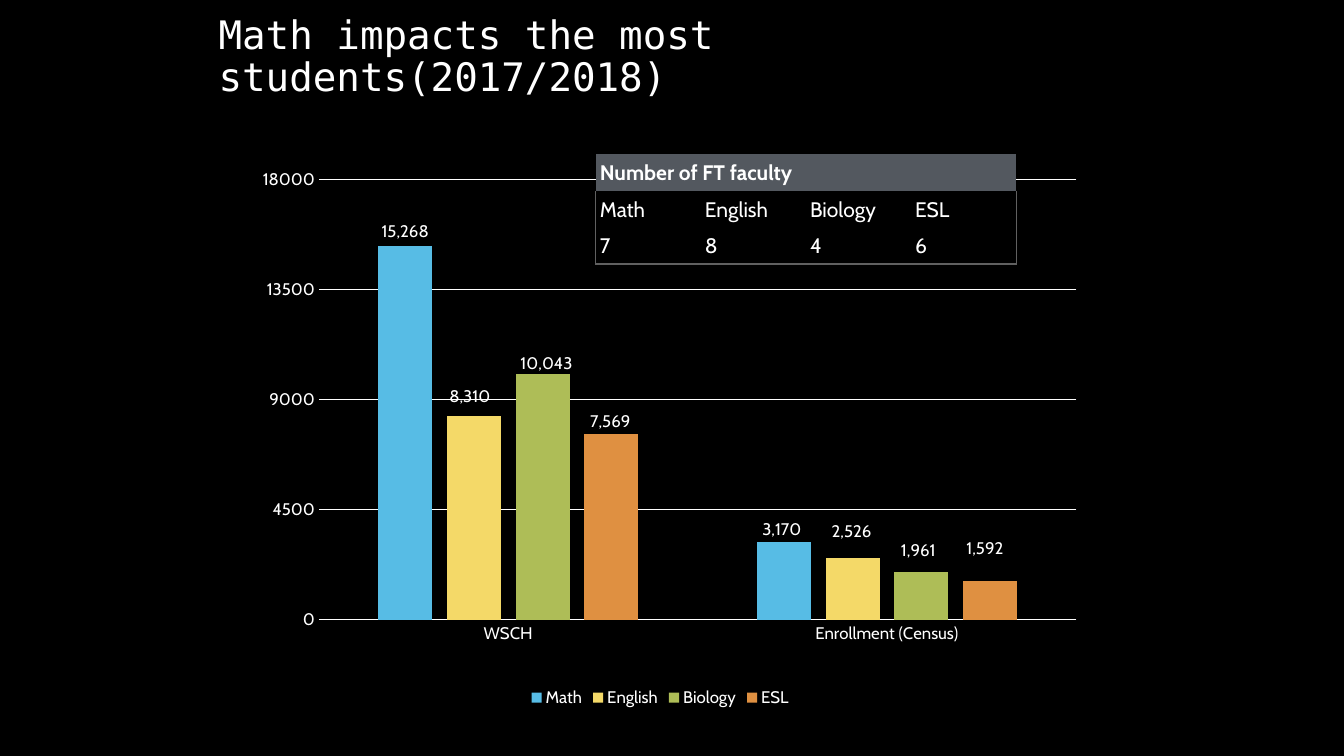
from lxml import etree
from pptx import Presentation
from pptx.chart.data import CategoryChartData
from pptx.dml.color import RGBColor
from pptx.enum.chart import XL_CHART_TYPE, XL_LABEL_POSITION, XL_LEGEND_POSITION, XL_TICK_MARK
from pptx.enum.text import MSO_ANCHOR
from pptx.oxml import parse_xml
from pptx.oxml.ns import nsdecls, qn
from pptx.util import Inches, Pt

COLUMNS = XL_CHART_TYPE.COLUMN_CLUSTERED
ABOVE_BAR = XL_LABEL_POSITION.OUTSIDE_END
LEGEND_BOTTOM = XL_LEGEND_POSITION.BOTTOM
NO_TICK = XL_TICK_MARK.NONE
MIDDLE, BOTTOM = MSO_ANCHOR.MIDDLE, MSO_ANCHOR.BOTTOM

BLACK = RGBColor(0x00, 0x00, 0x00)
WHITE = RGBColor(0xFF, 0xFF, 0xFF)
HEADER_GRAY = RGBColor(0x53, 0x58, 0x5F)
BORDER_GRAY = RGBColor(0x60, 0x60, 0x60)
BLUE = RGBColor(0x57, 0xBC, 0xE5)
YELLOW = RGBColor(0xF4, 0xD9, 0x68)
GREEN = RGBColor(0xAE, 0xBD, 0x57)
ORANGE = RGBColor(0xDF, 0x90, 0x41)
BODY_FONT, TITLE_FONT = "Cabin", "DejaVu Sans Mono"

MEASURES = ["WSCH", "Enrollment (Census)"]
# Subject, colour, values, label shifts (inches right, inches down)
SUBJECTS = [
    ("Math", BLUE, (15268, 3170), ((0, 0), (-0.02, 0.02))),
    ("English", YELLOW, (8310, 2526), ((-0.04, -0.06), (-0.01, -0.12))),
    ("Biology", GREEN, (10043, 1961), ((0.04, 0.04), (-0.03, -0.07))),
    ("ESL", ORANGE, (7569, 1592), ((-0.01, 0.01), (-0.05, -0.18))),
]
FACULTY = [["Math", "English", "Biology", "ESL"], ["7", "8", "4", "6"]]
CHART_WIDTH, CHART_HEIGHT = 8.26, 5.53


def style_font(font, size, name=BODY_FONT, bold=False):
    font.size, font.name, font.bold = Pt(size), name, bold
    font.color.rgb = WHITE


def manual_layout(x, y, extra=""):
    return parse_xml(
        f'<c:layout {nsdecls("c")}><c:manualLayout>{extra}'
        f'<c:x val="{x}"/><c:y val="{y}"/></c:manualLayout></c:layout>')


def set_plot_area(chart, x, y, width, height):
    layout = manual_layout(
        x, y, '<c:layoutTarget val="inner"/><c:xMode val="edge"/><c:yMode val="edge"/>')
    for tag, value in (("c:w", width), ("c:h", height)):
        etree.SubElement(layout[0], qn(tag)).set("val", str(value))
    plot_area = chart.plots[0]._element.getparent()
    for old in plot_area.findall(qn("c:layout")):
        plot_area.remove(old)
    plot_area.insert(0, layout)


def label_bar(series, index, shift):
    label = series.points[index].data_label
    style_font(label.font, 12)
    label.position = ABOVE_BAR
    xml = series._element.find(qn("c:dLbls")).findall(qn("c:dLbl"))[index]
    right, down = shift
    xml.insert(1, manual_layout(round(right / CHART_WIDTH, 4), round(down / CHART_HEIGHT, 4)))
    xml.insert(2, parse_xml(
        f'<c:numFmt {nsdecls("c")} formatCode="#,##0" sourceLinked="0"/>'))


def style_axis(axis):
    style_font(axis.tick_labels.font, 12)
    axis.tick_labels.number_format = "General"
    axis.tick_labels.number_format_is_linked = False
    axis.major_tick_mark = axis.minor_tick_mark = NO_TICK


def white_line(line):
    line.color.rgb = WHITE
    line.width = Pt(0.75)


def add_impact_chart(slide):
    data = CategoryChartData(number_format="#,##0")
    data.categories = MEASURES
    for subject, _, values, _ in SUBJECTS:
        data.add_series(subject, values)
    chart = slide.shapes.add_chart(
        COLUMNS, Inches(2.42), Inches(1.53),
        Inches(CHART_WIDTH), Inches(CHART_HEIGHT), data).chart
    style_font(chart.font, 10)
    chart.has_title = False
    set_plot_area(chart, 0.09, 0.045, 0.91, 0.79)

    # Legend
    chart.has_legend = True
    chart.legend.position = LEGEND_BOTTOM
    chart.legend.include_in_layout = False
    style_font(chart.legend.font, 12)

    # Axes
    measures, counts = chart.category_axis, chart.value_axis
    for axis in (measures, counts):
        style_axis(axis)
    white_line(measures.format.line)
    white_line(counts.major_gridlines.format.line)
    counts.format.line.fill.background()
    counts.minimum_scale, counts.maximum_scale, counts.major_unit = 0, 18000, 4500

    # Bars and their labels
    bars = chart.plots[0]
    bars.vary_by_categories = False
    bars.gap_width, bars.overlap = 219, -27
    for series, (_, color, _, shifts) in zip(bars.series, SUBJECTS):
        series.format.fill.solid()
        series.format.fill.fore_color.rgb = color
        for index, shift in enumerate(shifts):
            label_bar(series, index, shift)


def set_borders(cell, visible):
    properties = cell._tc.get_or_add_tcPr()
    for index, side in enumerate("LRTB"):
        paint = (f'<a:solidFill><a:srgbClr val="{BORDER_GRAY}"/></a:solidFill>'
                 if side in visible else "<a:noFill/>")
        properties.insert(index, parse_xml(
            f'<a:ln{side} {nsdecls("a")} w="12700">{paint}</a:ln{side}>'))


def fill_cell(cell, text, bold=False):
    cell.text = text
    cell.vertical_anchor = MIDDLE
    cell.margin_left = cell.margin_right = Inches(0.04)
    cell.margin_top = cell.margin_bottom = Inches(0.04)
    for run in cell.text_frame.paragraphs[0].runs:
        style_font(run.font, 15, bold=bold)


def add_faculty_table(slide):
    last = len(FACULTY[0]) - 1
    table = slide.shapes.add_table(
        len(FACULTY) + 1, last + 1, Inches(5.91), Inches(1.53),
        Inches(4.17), Inches(1.1)).table
    table.horz_banding = False
    for row, height in zip(table.rows, (0.37, 0.36, 0.36)):
        row.height = Inches(height)

    # Header across all columns
    header = table.cell(0, 0)
    header.merge(table.cell(0, last))
    fill_cell(header, "Number of FT faculty", bold=True)
    for column in range(last + 1):
        cell = table.cell(0, column)
        cell.fill.solid()
        cell.fill.fore_color.rgb = HEADER_GRAY
        set_borders(cell, "")

    # Subjects and counts, framed on the outside
    for row, texts in enumerate(FACULTY, start=1):
        for column, text in enumerate(texts):
            cell = table.cell(row, column)
            fill_cell(cell, text)
            cell.fill.background()
            sides = {0: "L", last: "R"}.get(column, "")
            set_borders(cell, sides + ("B" if row == len(FACULTY) else ""))


def add_title(slide, text):
    frame = slide.shapes.add_textbox(
        Inches(2.07), Inches(0.41), Inches(9.19), Inches(0.63)).text_frame
    frame.word_wrap = True
    frame.vertical_anchor = BOTTOM
    frame.text = text
    paragraph = frame.paragraphs[0]
    paragraph.line_spacing = 0.9
    style_font(paragraph.runs[0].font, 28, TITLE_FONT)


def main():
    deck = Presentation()
    deck.slide_width, deck.slide_height = Inches(13.33), Inches(7.5)
    slide = deck.slides.add_slide(deck.slide_layouts[6])
    slide.background.fill.solid()
    slide.background.fill.fore_color.rgb = BLACK
    add_impact_chart(slide)
    add_faculty_table(slide)
    add_title(slide, "Math impacts the most students(2017/2018)")
    deck.save("out.pptx")


if __name__ == "__main__":
    main()
